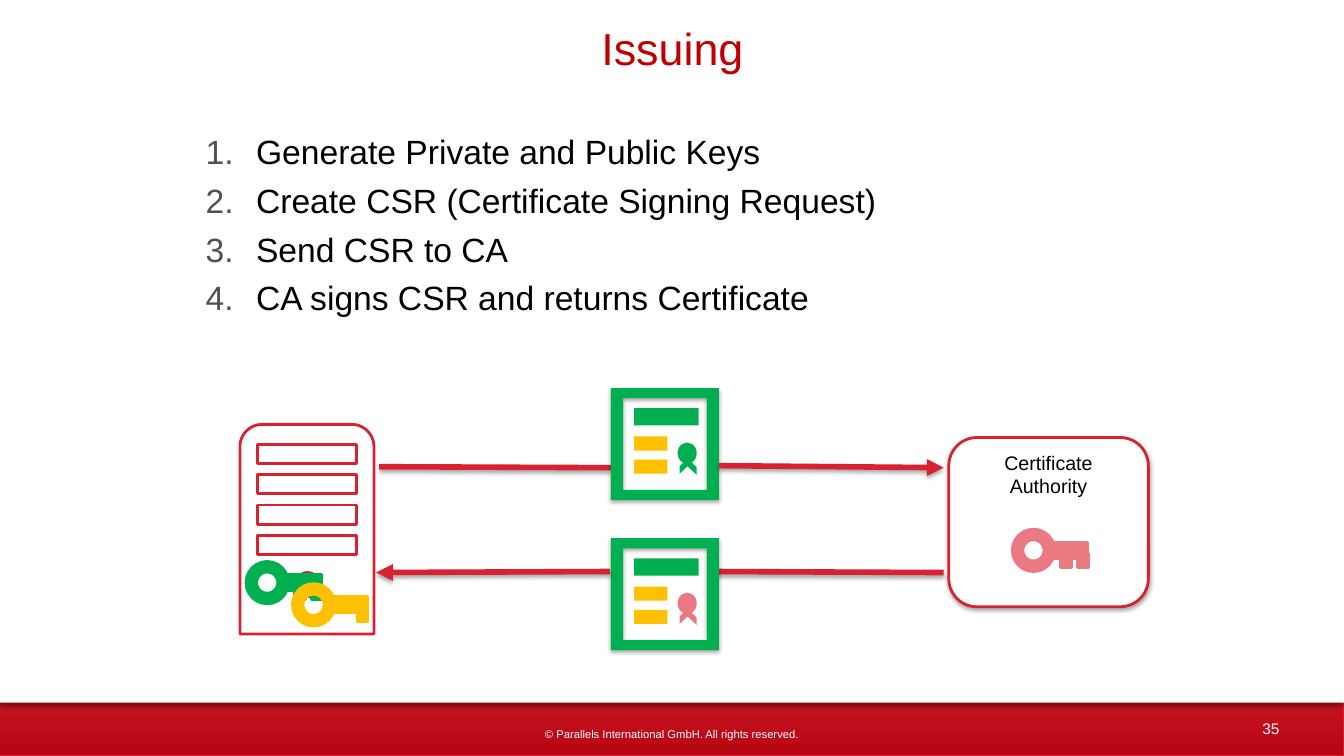
import pptx
import pptx.dml.color
import pptx.enum.shapes
import pptx.enum.text
import pptx.oxml
import pptx.oxml.ns
import pptx.util
from lxml import etree

SHAPE = pptx.enum.shapes.MSO_SHAPE
ALIGN = pptx.enum.text.PP_ALIGN
ANCHOR = pptx.enum.text.MSO_ANCHOR
qn = pptx.oxml.ns.qn

PX = 9144
RED, GREEN, YELLOW, PINK = "D92231", "00B050", "FFC000", "EA7982"
WHITE, BLACK = "FFFFFF", "000000"
STEPS = [
    "Generate Private and Public Keys",
    "Create CSR (Certificate Signing Request)",
    "Send CSR to CA",
    "CA signs CSR and returns Certificate",
]


def px(*lengths):
    """Turn px lengths into EMU."""
    return [length * PX for length in lengths]


def rgb(value):
    """Turn a hex string into a colour."""
    return pptx.dml.color.RGBColor.from_string(value)


def cast_shadow(part, blur=3, distance=1.8, alpha=35):
    """Give a part a soft shadow straight below it."""
    effects = part._element.spPr.find(qn("a:effectLst"))
    outer = etree.SubElement(
        effects, qn("a:outerShdw"), blurRad=str(int(blur * 12700)),
        dist=str(int(distance * 12700)), dir="5400000", rotWithShape="0")
    tint = etree.SubElement(outer, qn("a:srgbClr"), val=BLACK)
    etree.SubElement(tint, qn("a:alpha"), val=str(alpha * 1000))


def add_part(slide, kind, box, fill, line=None, width=2):
    """Add a flat preset shape, outlined if a line colour is given."""
    part = slide.shapes.add_shape(kind, *px(*box))
    part.shadow.inherit = False
    part.fill.solid()
    part.fill.fore_color.rgb = rgb(fill)
    if line:
        part.line.color.rgb = rgb(line)
        part.line.width = pptx.util.Pt(width)
    else:
        part.line.fill.background()
    return part


def style_paragraph(paragraph, size, color, align):
    """Set the font and alignment of a paragraph."""
    paragraph.alignment = align
    paragraph.font.name = "Arial"
    paragraph.font.size = pptx.util.Pt(size)
    paragraph.font.color.rgb = rgb(color)


def add_label(slide, box, text, size, color):
    """Add one centred line of text."""
    frame = slide.shapes.add_textbox(*px(*box)).text_frame
    frame.margin_left = frame.margin_right = 0
    frame.margin_top = frame.margin_bottom = 0
    frame.word_wrap = True
    frame.vertical_anchor = ANCHOR.MIDDLE
    frame.text = text
    style_paragraph(frame.paragraphs[0], size, color, ALIGN.CENTER)


def add_footer(slide, box):
    """Place the red band, the white page above it and the footer texts."""
    left, top, width, height = box
    band = add_part(slide, SHAPE.RECTANGLE, box, RED, "D91D2C", 0.75)
    band.fill.gradient()
    band.fill.gradient_angle = 90
    for stop, color, position in zip(band.fill.gradient_stops, ("B60513", RED), (0, 0.8)):
        stop.color.rgb = rgb(color)
        stop.position = position
    page = add_part(slide, SHAPE.RECTANGLE, (left, 0, width, top + 72), WHITE)
    cast_shadow(page, 4, 3, 40)
    add_label(slide, (left + 1233, top + 82, 55, 31), "35", 11, WHITE)
    add_label(slide, (left + 512, top + 97, 309, 13),
              "© Parallels International GmbH. All rights reserved.", 8, WHITE)


def add_steps(slide, box):
    """Place the numbered steps."""
    frame = slide.shapes.add_textbox(*px(*box)).text_frame
    frame.margin_left = frame.margin_right = 0
    frame.margin_top = frame.margin_bottom = 0
    frame.word_wrap = True
    for index, step in enumerate(STEPS):
        paragraph = frame.add_paragraph() if index else frame.paragraphs[0]
        paragraph.text = step
        if index:
            paragraph.space_before = pptx.util.Pt(6)
        properties = paragraph._p.get_or_add_pPr()
        properties.set("marL", str(50 * PX))
        properties.set("indent", str(-50 * PX))
        tint = etree.SubElement(properties, qn("a:buClr"))
        etree.SubElement(tint, qn("a:srgbClr"), val="525051")
        etree.SubElement(properties, qn("a:buFont"), typeface="Arial")
        etree.SubElement(properties, qn("a:buAutoNum"), type="arabicPeriod")
        style_paragraph(paragraph, 24, BLACK, ALIGN.LEFT)


def add_key(slide, left, top, color, teeth):
    """Place a key made of a bow, a shaft and teeth."""
    add_part(slide, SHAPE.DONUT, (left, top, 42, 42), color, color)
    add_part(slide, SHAPE.RECTANGLE, (left + 36, top + 13, 39, 16), color, color)
    for tooth in teeth:
        add_part(slide, SHAPE.RECTANGLE, (left + tooth, top + 24, 11, 14), color, color)


def add_authority(slide, box):
    """Place the certificate authority with its key."""
    left, top, width, height = box
    authority = add_part(slide, SHAPE.ROUNDED_RECTANGLE, box, WHITE, RED)
    cast_shadow(authority)
    frame = authority.text_frame
    frame.margin_left = frame.margin_right = 5 * PX
    frame.margin_top = frame.margin_bottom = 5 * PX
    frame.vertical_anchor = ANCHOR.TOP
    frame.text = "Certificate\nAuthority"
    for paragraph in frame.paragraphs:
        style_paragraph(paragraph, 14, BLACK, ALIGN.CENTER)
    add_key(slide, left + 63, top + 91, PINK, (65, 48))


def add_server(slide, box):
    """Place the server with its slots and its two keys."""
    left, top, width, height = box
    add_part(slide, SHAPE.ROUND_2_SAME_RECTANGLE, box, WHITE, RED)
    for slot in range(4):
        add_part(slide, SHAPE.RECTANGLE, (left + 17, top + 20 + 30 * slot, 99, 19), WHITE, RED)
    add_part(slide, SHAPE.OVAL, (left + 55, top + 147, 24, 24), WHITE, RED)
    add_key(slide, left + 6, top + 136, GREEN, (65, 48))
    add_key(slide, left + 52, top + 158, YELLOW, (64,))


def add_certificate(slide, box, seal):
    """Place a framed certificate with a seal in the given colour."""
    left, top, width, height = box
    add_part(slide, SHAPE.RECTANGLE, (left + 23, top + 20, 64, 17), GREEN)
    for line_top in (48, 71):
        add_part(slide, SHAPE.RECTANGLE, (left + 23, top + line_top, 33, 14), YELLOW)
    add_part(slide, SHAPE.OVAL, (left + 66, top + 54, 19, 21), seal)
    add_part(slide, SHAPE.DIAGONAL_STRIPE, (left + 68, top + 70, 16, 15), seal)
    ribbon = add_part(slide, SHAPE.DIAGONAL_STRIPE, (left + 69, top + 71, 16, 15), seal)
    ribbon._element.spPr.find(qn("a:xfrm")).set("flipH", "1")
    for side in (
        (left, top, width, 10),
        (left + width - 12, top + 10, 12, height - 20),
        (left, top + 10, 12, height - 20),
        (left, top + height - 10, width, 10),
    ):
        cast_shadow(add_part(slide, SHAPE.RECTANGLE, side, GREEN))


def add_link(slide, ends, arrow):
    """Place a red line, with an arrowhead at its end if asked."""
    link = slide.shapes.add_connector(pptx.enum.shapes.MSO_CONNECTOR.STRAIGHT, *px(*ends))
    link.line.color.rgb = rgb(RED)
    link.line.width = pptx.util.Pt(4)
    properties = link._element.spPr
    if arrow:
        etree.SubElement(properties.find(qn("a:ln")), qn("a:tailEnd"), type="triangle")
    etree.SubElement(properties, qn("a:effectLst"))
    cast_shadow(link)


def main():
    """Build the slide and save it."""
    deck = pptx.Presentation()
    deck.slide_width, deck.slide_height = px(1333, 750)
    slide = deck.slides.add_slide(deck.slide_layouts[6])
    add_footer(slide, (0, 625, 1333, 125))
    add_label(slide, (199, 20, 936, 54), "Issuing", 32, "C00000")
    add_steps(slide, (204, 130, 917, 185))
    add_authority(slide, (941, 434, 198, 168))
    add_link(slide, (376, 463, 606, 464), False)
    add_link(slide, (936, 568, 707, 567), False)
    add_server(slide, (238, 421, 133, 208))
    add_certificate(slide, (606, 385, 107, 111), GREEN)
    add_certificate(slide, (606, 534, 107, 111), PINK)
    add_link(slide, (713, 462, 936, 464), True)
    add_link(slide, (605, 567, 373, 568), True)
    deck.save("out.pptx")


if __name__ == "__main__":
    main()
